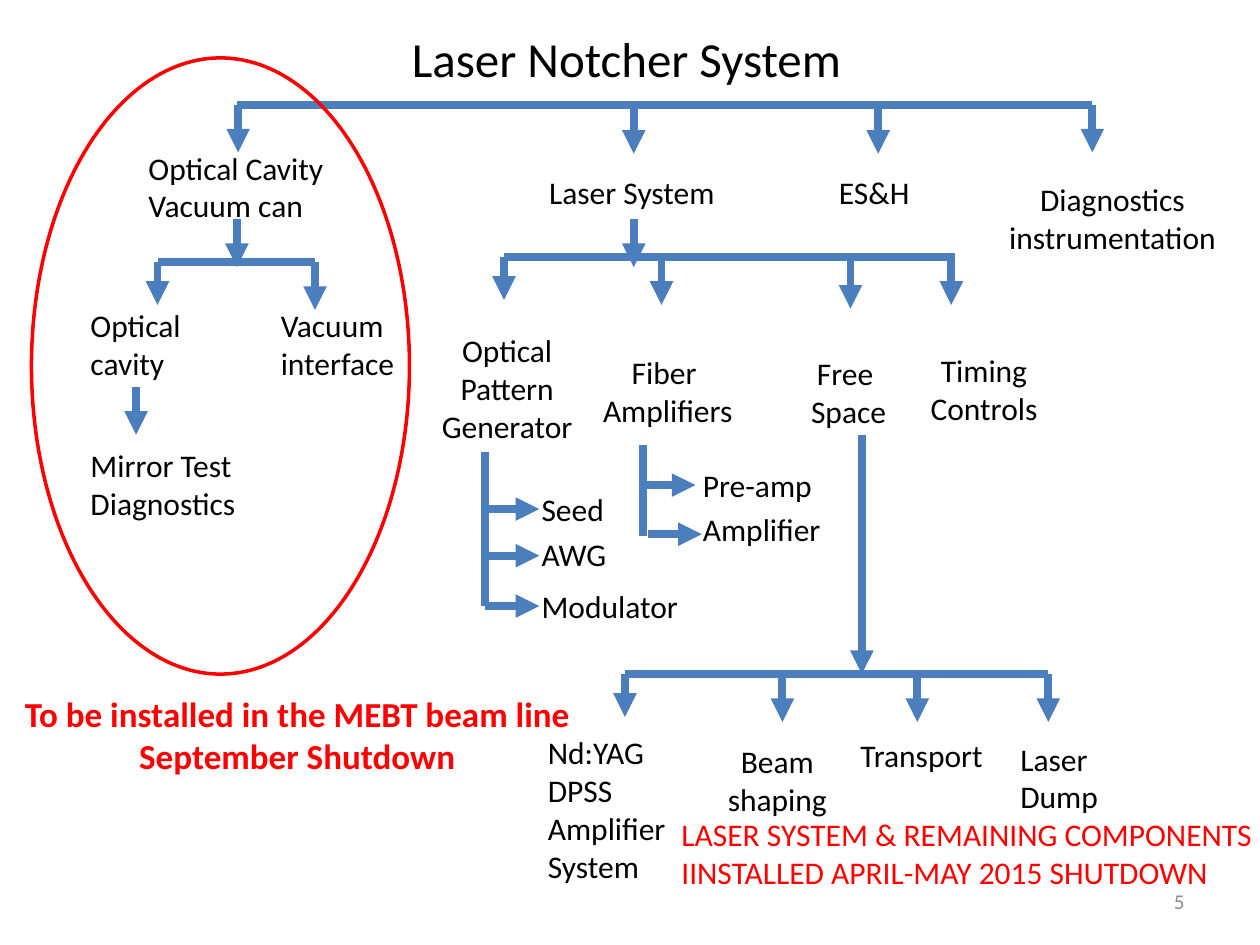
from lxml.etree import SubElement
from pptx import Presentation
from pptx.dml.color import RGBColor
from pptx.enum.shapes import MSO_CONNECTOR, MSO_SHAPE
from pptx.enum.text import MSO_ANCHOR, MSO_AUTO_SIZE, PP_ALIGN
from pptx.oxml.ns import qn
from pptx.util import Inches, Pt

BLUE, RED, BLACK, GRAY = "4B7EBC", "FF0000", "000000", "8C8C8C"
ALIGN = {"l": PP_ALIGN.LEFT, "c": PP_ALIGN.CENTER, "r": PP_ALIGN.RIGHT}


def paint(target, color):
    target.rgb = RGBColor.from_string(color)


def write(frame, text, size=18, color=BLACK, bold=False, align="l"):
    for i, line in enumerate(text.split("\n")):
        para = frame.paragraphs[0] if i == 0 else frame.add_paragraph()
        para.alignment = ALIGN[align]
        run = para.add_run()
        run.text = line
        run.font.name = "Calibri"
        run.font.size = Pt(size)
        run.font.bold = bold
        paint(run.font.color, color)


class Chart:
    """Holds the slide and the line style of the tree."""

    def __init__(self, slide, color=BLUE, width=4.5):
        self.slide, self.color, self.width = slide, color, width

    def label(self, x, y, wide, text, size=18, **form):
        # Height follows from the line count and the text size
        high = 0.1 + 0.0169 * size * len(text.split("\n"))
        box = self.slide.shapes.add_textbox(
            Inches(x), Inches(y), Inches(wide), Inches(high))
        frame = box.text_frame
        frame.word_wrap = False
        frame.auto_size = MSO_AUTO_SIZE.SHAPE_TO_FIT_TEXT
        write(frame, text, size=size, **form)
        return frame

    def line(self, x1, y1, x2, y2, arrow=False):
        link = self.slide.shapes.add_connector(
            MSO_CONNECTOR.STRAIGHT,
            Inches(x1), Inches(y1), Inches(x2), Inches(y2))
        paint(link.line.color, self.color)
        link.line.width = Pt(self.width)
        if arrow:
            SubElement(link.line._get_or_add_ln(), qn("a:tailEnd"),
                       type="triangle")
        SubElement(link._element.spPr, qn("a:effectLst"))

    def drop(self, x, top, end):
        self.line(x, top, x, end, arrow=True)

    def branch(self, y, left, right, drops):
        self.line(left, y, right, y)
        for x, top, end in drops:
            self.drop(x, top, end)

    def stem(self, x, top, end, rows, reach=0.43):
        self.line(x, top, x, end)
        for start, y in rows:
            self.line(start, y, start + reach, y, arrow=True)

    def ring(self, x, y, wide, high, color):
        oval = self.slide.shapes.add_shape(
            MSO_SHAPE.OVAL, Inches(x), Inches(y), Inches(wide), Inches(high))
        oval.shadow.inherit = False
        oval.fill.background()
        paint(oval.line.color, color)
        oval.line.width = Pt(2)


def main():
    deck = Presentation()
    deck.slide_width, deck.slide_height = Inches(10), Inches(7.5)
    tree = Chart(deck.slides.add_slide(deck.slide_layouts[6]))

    # Title and top level
    tree.label(3.17, 0.18, 3.65, "Laser Notcher System", size=28)
    tree.branch(0.83, 1.88, 8.67, [
        (1.89, 0.83, 1.21), (5.03, 0.85, 1.22),
        (6.97, 0.85, 1.22), (8.67, 0.83, 1.21)])
    tree.label(1.08, 1.13, 1.61, "Optical Cavity\nVacuum can")
    tree.label(4.26, 1.32, 1.53, "Laser System")
    tree.label(6.56, 1.32, 0.77, "ES&H")
    tree.label(7.9, 1.38, 1.86, "Diagnostics\ninstrumentation", align="c")

    # Optical cavity
    tree.drop(1.88, 1.74, 2.12)
    tree.branch(2.08, 1.25, 2.5, [(1.25, 2.08, 2.42), (2.5, 2.08, 2.46)])
    tree.label(0.62, 2.38, 0.93, "Optical\ncavity")
    tree.label(2.13, 2.38, 1.11, "Vacuum\ninterface")
    tree.drop(1.08, 3.07, 3.45)
    tree.label(0.62, 3.49, 1.36, "Mirror Test\nDiagnostics")

    # Laser system
    tree.drop(5.03, 1.74, 2.12)
    tree.branch(2.04, 4, 7.58, [
        (4, 2.04, 2.38), (5.25, 2.04, 2.42),
        (6.75, 2.07, 2.45), (7.55, 2.07, 2.42)])
    for x, y, wide, text in [
            (3.4, 2.58, 1.25, "Optical\nPattern\nGenerator"),
            (4.68, 2.75, 1.24, "Fiber \nAmplifiers"),
            (6.33, 2.76, 0.81, "Free \nSpace"),
            (7.28, 2.74, 1.06, "Timing\nControls")]:
        tree.label(x, y, wide, text, align="c")

    # Parts of the pattern generator and the amplifiers
    tree.stem(3.85, 3.59, 4.81, [(3.85, y) for y in (4.04, 4.41, 4.81)])
    tree.label(4.2, 3.84, 0.7, "Seed")
    tree.label(4.2, 4.2, 0.72, "AWG")
    tree.label(4.2, 4.61, 1.3, "Modulator")
    tree.stem(5.1, 3.53, 4.25, [(5.09, 3.85), (5.14, 4.24)])
    tree.label(5.48, 3.65, 1.08, "Pre-amp")
    tree.label(5.48, 4, 1.15, "Amplifier")

    # Free space
    tree.drop(6.84, 3.45, 5.35)
    tree.branch(5.35, 4.96, 8.32, [
        (4.96, 5.35, 5.69), (6.21, 5.35, 5.73),
        (7.28, 5.36, 5.73), (8.32, 5.35, 5.73)])
    tree.label(4.25, 5.77, 1.15, "Nd:YAG\nDPSS\nAmplifier\nSystem")
    tree.label(5.67, 5.84, 1, "Beam\nshaping", align="c")
    tree.label(6.73, 5.79, 1.18, "Transport")
    tree.label(8, 5.82, 0.83, "Laser\nDump")

    # Installation notes
    tree.ring(0.25, 0.46, 3, 4.89, RED)
    tree.label(0.08, 5.45, 4.56,
               "To be installed in the MEBT beam line\nSeptember Shutdown",
               size=20, color=RED, bold=True, align="c")
    tree.label(5.31, 6.42, 4.77,
               "LASER SYSTEM & REMAINING COMPONENTS\n"
               "IINSTALLED APRIL-MAY 2015 SHUTDOWN", color=RED)

    # Slide number
    frame = tree.label(7.17, 7, 2.33, "5", size=12, color=GRAY, align="r")
    frame.word_wrap = True
    frame.vertical_anchor = MSO_ANCHOR.MIDDLE

    deck.save("out.pptx")


if __name__ == "__main__":
    main()
